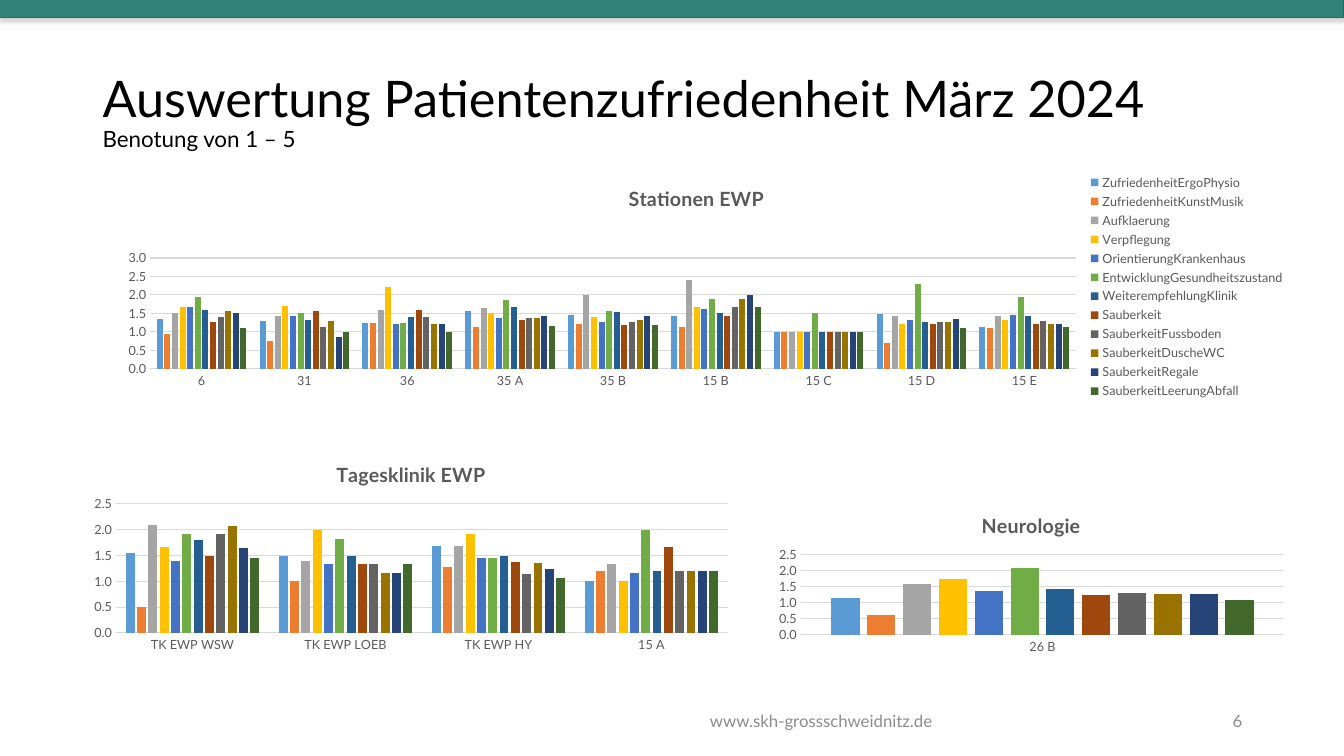
from dataclasses import dataclass
from typing import Optional

from lxml import etree
from pptx import Presentation
from pptx import util as u
from pptx.chart.data import CategoryChartData
from pptx.dml.color import RGBColor
from pptx.enum import chart as ch, shapes, text
from pptx.oxml import parse_xml
from pptx.oxml.ns import nsdecls, qn

FONT = "Lato"
GREY, GRID = "595959", "D9D9D9"

# Rated criteria and their colours, shared by all charts
CRITERIA = {
    "ZufriedenheitErgoPhysio": "5B9BD5",
    "ZufriedenheitKunstMusik": "ED7D31",
    "Aufklaerung": "A5A5A5",
    "Verpflegung": "FFC000",
    "OrientierungKrankenhaus": "4472C4",
    "EntwicklungGesundheitszustand": "70AD47",
    "WeiterempfehlungKlinik": "255E91",
    "Sauberkeit": "9E480E",
    "SauberkeitFussboden": "636363",
    "SauberkeitDuscheWC": "997300",
    "SauberkeitRegale": "264478",
    "SauberkeitLeerungAbfall": "43682B",
}


@dataclass
class Box:
    left: float
    top: float
    width: float = 0
    height: float = 0

    def inches(self) -> tuple:
        return tuple(map(u.Inches, (self.left, self.top, self.width, self.height)))


@dataclass
class RatingChart:
    title: str
    frame: Box
    plot: Box
    title_at: Box
    top_grade: float
    wards: list[str]
    grades: list[tuple]  # one tuple per criterion
    legend: Optional[Box] = None


@dataclass
class Label:
    box: Box
    lines: list[tuple[str, int]]  # wording and size
    color: str
    align: text.PP_ALIGN
    spacing: float = 1.0


RATINGS = [
    RatingChart(
        "Neurologie", Box(7.62, 4.95, 5.22, 1.57), Box(7.94, 5.5, 4.8, 0.8),
        Box(9.7, 5.04), 2.5, ["26 B"],
        [(1.15,), (0.63,), (1.58,), (1.73,), (1.35,), (2.09,),
         (1.43,), (1.24,), (1.29,), (1.27,), (1.28,), (1.08,)]),
    RatingChart(
        "Stationen EWP", Box(0.81, 1.69, 12.22, 2.31), Box(1.49, 2.56, 9.18, 1.1),
        Box(6.2, 1.79), 3,
        ["6", "31", "36", "35 A", "35 B", "15 B", "15 C", "15 D", "15 E"],
        [(1.36, 1.29, 1.25, 1.57, 1.46, 1.44, 1, 1.47, 1.14),
         (0.93, 0.75, 1.25, 1.13, 1.21, 1.14, 1, 0.7, 1.11),
         (1.5, 1.43, 1.6, 1.64, 2, 2.4, 1, 1.43, 1.42),
         (1.68, 1.71, 2.2, 1.52, 1.39, 1.67, 1, 1.2, 1.31),
         (1.67, 1.43, 1.2, 1.38, 1.26, 1.62, 1, 1.33, 1.46),
         (1.95, 1.5, 1.25, 1.87, 1.56, 1.88, 1.5, 2.29, 1.94),
         (1.59, 1.33, 1.4, 1.67, 1.54, 1.5, 1, 1.27, 1.44),
         (1.27, 1.57, 1.6, 1.32, 1.19, 1.44, 1, 1.2, 1.2),
         (1.4, 1.14, 1.4, 1.38, 1.27, 1.67, 1, 1.27, 1.29),
         (1.55, 1.29, 1.2, 1.38, 1.31, 1.89, 1, 1.27, 1.2),
         (1.5, 0.86, 1.2, 1.42, 1.42, 2, 1, 1.36, 1.21),
         (1.1, 1, 1, 1.17, 1.19, 1.67, 1, 1.1, 1.14)],
        legend=Box(10.72, 1.7, 2.1, 2.29)),
    RatingChart(
        "Tagesklinik EWP", Box(0.81, 4.44, 6.55, 2.07), Box(1.15, 5.0, 6.07, 1.28),
        Box(3.3, 4.53), 2.5, ["TK EWP WSW", "TK EWP LOEB", "TK EWP HY", "15 A"],
        [(1.55, 1.5, 1.69, 1), (0.5, 1, 1.27, 1.2), (2.09, 1.4, 1.69, 1.33),
         (1.67, 2, 1.92, 1), (1.4, 1.33, 1.46, 1.17), (1.91, 1.83, 1.46, 2),
         (1.8, 1.5, 1.5, 1.2), (1.5, 1.33, 1.38, 1.67), (1.92, 1.33, 1.14, 1.2),
         (2.08, 1.17, 1.36, 1.2), (1.64, 1.17, 1.23, 1.2), (1.46, 1.33, 1.07, 1.2)]),
]

LABELS = [
    Label(Box(0.92, 0.4, 11.5, 1.45),
          [("Auswertung Patientenzufriedenheit März 2024", 36),
           ("Benotung von 1 – 5", 16)], "000000", text.PP_ALIGN.LEFT, 0.9),
    Label(Box(4.82, 6.95, 6.65, 0.4), [("www.skh-grossschweidnitz.de", 12)],
          "8C8C8C", text.PP_ALIGN.CENTER),
    Label(Box(11.76, 6.95, 0.66, 0.4), [("6", 12)], "8C8C8C", text.PP_ALIGN.RIGHT),
]


def rgb(color: str) -> RGBColor:
    return RGBColor.from_string(color)


def style_font(font, size: float, color: str = GREY, bold: bool = False) -> None:
    font.name, font.size, font.bold = FONT, u.Pt(size), bold
    font.color.rgb = rgb(color)


def style_line(line, color: str) -> None:
    line.color.rgb, line.width = rgb(color), u.Pt(0.75)


def place(part, index: int, box: Box, frame: Box, **settings) -> None:
    """Put a chart part at a box on the slide, as shares of the chart frame."""
    settings |= dict(xMode="edge", yMode="edge",
                     x=(box.left - frame.left) / frame.width,
                     y=(box.top - frame.top) / frame.height)
    if box.width:
        settings |= dict(w=box.width / frame.width, h=box.height / frame.height)
    for old in part.findall(qn("c:layout")):
        part.remove(old)
    layout = etree.Element(qn("c:layout"))
    manual = etree.SubElement(layout, qn("c:manualLayout"))
    for tag, value in settings.items():
        etree.SubElement(manual, qn(f"c:{tag}"), val=str(value))
    part.insert(index, layout)


def add_header_bar(slide) -> None:
    bar = slide.shapes.add_shape(shapes.MSO_SHAPE.RECTANGLE, *Box(0, 0, 13.33, 0.17).inches())
    bar.fill.solid()
    bar.fill.fore_color.rgb = rgb("328279")
    style_line(bar.line, "008442")
    bar._element.spPr.append(parse_xml(
        f'<a:effectLst {nsdecls("a")}>'
        f'<a:outerShdw blurRad="{u.Pt(3.1)}" dist="{u.Pt(1.8)}" dir="5400000" rotWithShape="0">'
        '<a:srgbClr val="808080"><a:alpha val="35000"/></a:srgbClr>'
        '</a:outerShdw></a:effectLst>'))


def add_label(slide, label: Label) -> None:
    frame = slide.shapes.add_textbox(*label.box.inches()).text_frame
    frame.word_wrap = True
    frame.vertical_anchor = text.MSO_ANCHOR.MIDDLE
    paragraph = frame.paragraphs[0]
    paragraph.alignment, paragraph.line_spacing = label.align, label.spacing
    style_font(paragraph.font, label.lines[0][1], label.color)
    for number, (wording, size) in enumerate(label.lines):
        if number:
            paragraph.add_line_break()
        run = paragraph.add_run()
        run.text = wording
        style_font(run.font, size, label.color)


def add_rating_chart(slide, rating: RatingChart) -> None:
    data = CategoryChartData(number_format="0.00")
    data.categories = rating.wards
    for criterion, grades in zip(CRITERIA, rating.grades):
        data.add_series(criterion, grades)
    frame = rating.frame
    chart = slide.shapes.add_chart(
        ch.XL_CHART_TYPE.COLUMN_CLUSTERED, *frame.inches(), data).chart
    style_font(chart.font, 10, "000000")

    # Title
    chart.has_title = True
    heading = chart.chart_title.text_frame.paragraphs[0]
    heading.text = rating.title
    style_font(heading.font, 14, bold=True)
    place(chart.chart_title._element, 1, rating.title_at, frame)

    # Plot and columns
    place(chart._chartSpace.chart.plotArea, 0, rating.plot, frame, layoutTarget="inner")
    plot = chart.plots[0]
    plot.gap_width, plot.overlap, plot.vary_by_categories = 219, -27, False
    for series, color in zip(plot.series, CRITERIA.values()):
        series.format.fill.solid()
        series.format.fill.fore_color.rgb = rgb(color)

    # Axes
    wards, grades = chart.category_axis, chart.value_axis
    for axis in (wards, grades):
        axis.major_tick_mark = axis.minor_tick_mark = ch.XL_TICK_MARK.NONE
        style_font(axis.tick_labels.font, 9)
    style_line(wards.format.line, GRID)
    grades.format.line.fill.background()
    style_line(grades.major_gridlines.format.line, GRID)
    grades.minimum_scale, grades.maximum_scale, grades.major_unit = 0, rating.top_grade, 0.5
    grades.tick_labels.number_format = "0.0"
    grades.tick_labels.number_format_is_linked = False

    # Legend
    chart.has_legend = rating.legend is not None
    if rating.legend:
        chart.legend.position = ch.XL_LEGEND_POSITION.RIGHT
        chart.legend.include_in_layout = False
        style_font(chart.legend.font, 9)
        place(chart.legend._element, 1, rating.legend, frame)


def main() -> None:
    deck = Presentation()
    deck.slide_width, deck.slide_height = u.Inches(13.33), u.Inches(7.5)
    slide = deck.slides.add_slide(deck.slide_layouts[6])
    add_header_bar(slide)
    for label in LABELS:
        add_label(slide, label)
    for rating in RATINGS:
        add_rating_chart(slide, rating)
    deck.save("out.pptx")


if __name__ == "__main__":
    main()
